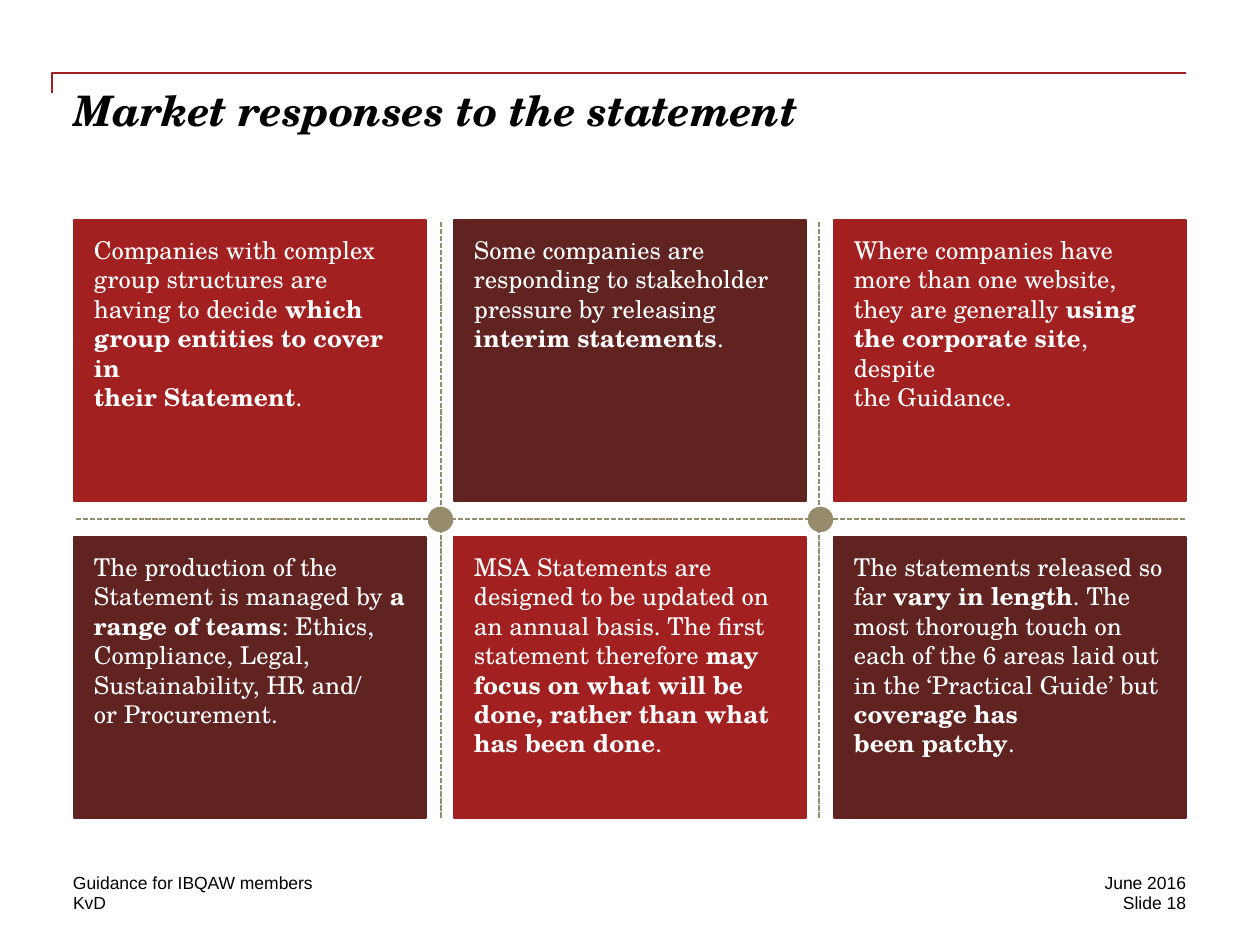
import pptx
import pptx.util
import pptx.dml.color
import pptx.enum.dml
import pptx.enum.shapes
import pptx.enum.text
import pptx.oxml.ns
from dataclasses import dataclass
from lxml import etree

RGB = pptx.dml.color.RGBColor
RED = RGB(0xA3, 0x20, 0x20)
DARK = RGB(0x60, 0x23, 0x20)
TAN = RGB(0x96, 0x8C, 0x6D)
BLACK = RGB(0, 0, 0)
WHITE = RGB(0xFF, 0xFF, 0xFF)

SERIF = "TeX Gyre Schola"
SANS = "Arial"
SCALE = 914400 / 126  # EMU per px

ALIGN = pptx.enum.text.PP_ALIGN
ANCHOR = pptx.enum.text.MSO_ANCHOR
KIND = pptx.enum.shapes.MSO_SHAPE


@dataclass
class Card:
    col: int
    row: int
    fill: RGB
    runs: list[tuple[str, bool]]  # text, bold


@dataclass
class Label:
    left: int
    top: int
    wide: int
    text: str
    align: ALIGN


CARDS = [
    Card(0, 0, RED, [
        ("Companies with complex group structures are having to decide ", False),
        ("which group entities to cover in \ntheir Statement", True),
        (".", False)]),
    Card(1, 0, DARK, [
        ("Some companies are responding to stakeholder pressure by releasing ", False),
        ("interim statements", True),
        (".", False)]),
    Card(2, 0, RED, [
        ("Where companies have more than one website, they are generally ", False),
        ("using the corporate site", True),
        (", despite \nthe Guidance.", False)]),
    Card(0, 1, DARK, [
        ("The production of the Statement is managed by", False),
        (" a range of teams", True),
        (": Ethics, Compliance, Legal, Sustainability, HR and/\nor Procurement.", False)]),
    Card(1, 1, RED, [
        ("MSA Statements are designed to be updated on an annual basis. "
         "The first statement therefore ", False),
        ("may focus on what will be done, rather than what has been done", True),
        (".", False)]),
    Card(2, 1, DARK, [
        ("The statements released so far ", False),
        ("vary in length", True),
        (". The most thorough touch on each of the 6 areas laid out "
         "in the ‘Practical Guide’ but ", False),
        ("coverage has \nbeen patchy", True),
        (".", False)]),
]

LABELS = [
    Label(73, 872, 368, "Guidance for IBQAW members", ALIGN.LEFT),
    Label(73, 892, 357, "KvD", ALIGN.LEFT),
    Label(976, 872, 210, "June 2016", ALIGN.RIGHT),
    Label(976, 892, 210, "Slide 18", ALIGN.RIGHT),
]


def px(size: int) -> int:
    return round(size * SCALE)


def inset(frame, left: int = 0, top: int = 0, right: int = 0, low: int = 0) -> None:
    frame.margin_left, frame.margin_top = px(left), px(top)
    frame.margin_right, frame.margin_bottom = px(right), px(low)
    frame.word_wrap = True
    frame.auto_size = pptx.enum.text.MSO_AUTO_SIZE.NONE
    frame.vertical_anchor = ANCHOR.TOP


def style(para, name: str, size: int, color: RGB, align=ALIGN.LEFT) -> None:
    para.alignment = align
    para.font.name = name
    para.font.size = pptx.util.Pt(size)
    para.font.color.rgb = color


def add_form(slide, kind, left: int, top: int, wide: int, high: int,
             color: RGB, weight: float):
    form = slide.shapes.add_shape(kind, px(left), px(top), px(wide), px(high))
    form.shadow.inherit = False
    form.fill.solid()
    form.fill.fore_color.rgb = color
    form.line.color.rgb = color
    form.line.width = pptx.util.Pt(weight)
    return form


def add_card(slide, card: Card) -> None:
    form = add_form(slide, KIND.RECTANGLE, 74 + 380 * card.col,
                    220 + 317 * card.row, 352, 281, card.fill, 1)
    inset(form.text_frame, 20, 15, 20, 10)
    para = form.text_frame.paragraphs[0]
    style(para, SERIF, 14, WHITE)
    for text, bold in card.runs:
        for i, part in enumerate(text.split("\n")):
            if i:
                para.add_line_break()
            run = para.add_run()
            run.text = part
            run.font.bold = bold


def add_dash(slide, x1: int, y1: int, x2: int, y2: int) -> None:
    dash = slide.shapes.add_connector(
        pptx.enum.shapes.MSO_CONNECTOR.STRAIGHT, px(x1), px(y1), px(x2), px(y2))
    dash.line.color.rgb = TAN
    dash.line.width = pptx.util.Pt(1)
    dash.line.dash_style = pptx.enum.dml.MSO_LINE.SQUARE_DOT
    etree.SubElement(dash._element.spPr, pptx.oxml.ns.qn("a:effectLst"))


def add_label(slide, label: Label) -> None:
    box = slide.shapes.add_textbox(
        px(label.left), px(label.top), px(label.wide), px(21))
    inset(box.text_frame)
    para = box.text_frame.paragraphs[0]
    para.text = label.text
    style(para, SANS, 10, BLACK, label.align)


def add_rule(slide) -> None:
    path = slide.shapes.build_freeform(52, 93, scale=SCALE)
    path.add_line_segments([(52, 73), (1186, 73)], close=False)
    rule = path.convert_to_shape()
    rule.shadow.inherit = False
    rule.fill.background()
    rule.line.color.rgb = RED
    rule.line.width = pptx.util.Pt(1)


def add_title(slide, text: str) -> None:
    title = slide.shapes.title
    title.left, title.top = px(73), px(84)
    title.width, title.height = px(1113), px(113)
    inset(title.text_frame)
    para = title.text_frame.paragraphs[0]
    para.text = text
    style(para, SERIF, 24, BLACK)
    para.font.bold = para.font.italic = True


def main() -> None:
    deck = pptx.Presentation()
    deck.slide_width, deck.slide_height = px(1260), px(945)
    slide = deck.slides.add_slide(deck.slide_layouts[5])

    # Heading
    add_rule(slide)
    add_title(slide, "Market responses to the statement")

    # Footer
    for label in LABELS:
        add_label(slide, label)

    # Cards
    for card in CARDS:
        add_card(slide, card)

    # Dashed grid with a dot at each crossing
    add_dash(slide, 76, 519, 1187, 519)
    for mid in (441, 819):
        add_dash(slide, mid, 222, mid, 818)
    for left in (428, 808):
        add_form(slide, KIND.OVAL, left, 507, 25, 25, TAN, 0.25)

    deck.save("out.pptx")


if __name__ == "__main__":
    main()
